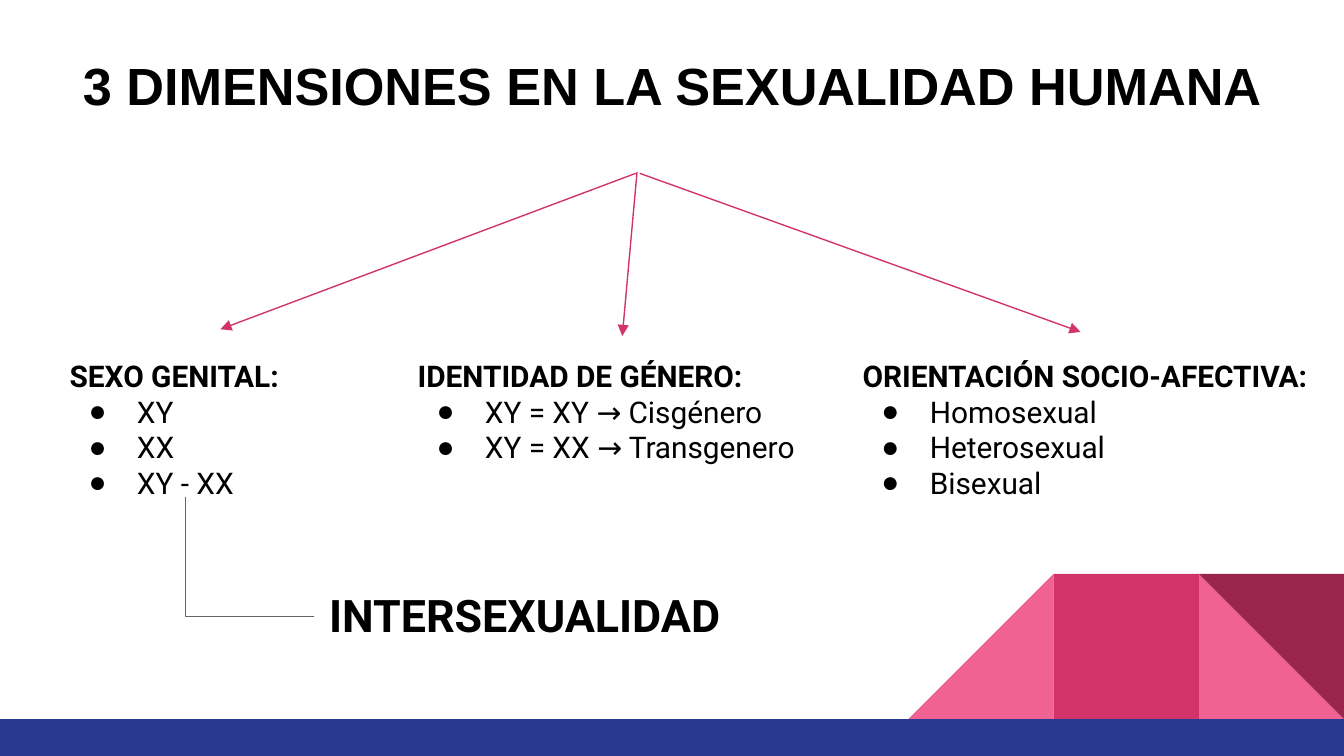
"""Builds the slide on three dimensions of human sexuality."""
from lxml import etree
from pptx import Presentation
from pptx import util as u
from pptx.dml.color import RGBColor
from pptx.enum import shapes, text
from pptx.oxml import ns

INK = {"black": "000000", "pink": "F06292", "rose": "D23369",
       "wine": "9C254D", "blue": "2A3990", "gray": "666666"}


def write(par, words, size, font, bold):
    run = par.add_run()
    run.text = words
    run.font.size = u.Pt(size)
    run.font.name = font
    run.font.bold = bold
    run.font.color.rgb = RGBColor.from_string(INK["black"])


def link(kind, start, end, ink, width):
    line = slide.shapes.add_connector(kind, *map(u.Inches, start + end))
    line.line.color.rgb = RGBColor.from_string(INK[ink])
    line.line.width = u.Pt(width)
    etree.SubElement(line._element.spPr, ns.qn("a:effectLst"))
    return line


deck = Presentation()
deck.slide_width = u.Inches(10)
deck.slide_height = u.Inches(10) * 9 // 16
slide = deck.slides.add_slide(deck.slide_layouts[5])

side, top = 1.08, 4.27
tri, rect = shapes.MSO_SHAPE.RIGHT_TRIANGLE, shapes.MSO_SHAPE.RECTANGLE
decor = [
    (tri, 10 - side, top, side, side, "pink", 0, False),
    (tri, 10 - 3 * side, top, side, side, "pink", 0, True),
    (rect, 10 - 2 * side, top, side, side, "rose", 0, False),
    (tri, 10 - side, top, side, side, "wine", 180, False),
    (rect, 0, top + side, 10, 0.28, "blue", 0, False),
]
for kind, x, y, w, h, ink, turn, flip in decor:
    part = slide.shapes.add_shape(kind, *map(u.Inches, (x, y, w, h)))
    part.shadow.inherit = False
    part.fill.solid()
    part.fill.fore_color.rgb = RGBColor.from_string(INK[ink])
    part.line.fill.background()
    part.rotation = turn
    if flip:
        part._element.spPr.find(ns.qn("a:xfrm")).set("flipH", "1")

title = slide.shapes.title
title.left, title.top = u.Inches(0.34), u.Inches(0.23)
title.width, title.height = u.Inches(9.32), u.Inches(0.66)
frame = title.text_frame
frame.margin_left = frame.margin_right = u.Inches(0.1)
frame.margin_top = frame.margin_bottom = u.Inches(0.1)
frame.auto_size = text.MSO_AUTO_SIZE.NONE
frame.vertical_anchor = text.MSO_ANCHOR.TOP
par = frame.paragraphs[0]
par.alignment = text.PP_ALIGN.CENTER
par.line_spacing = 1.15
par.space_before, par.space_after = u.Pt(14), u.Pt(4)
write(par, "3 DIMENSIONES EN LA SEXUALIDAD HUMANA", 28, "Arial", True)

arrows = [((4.73, 1.29), (1.64, 2.45)),
          ((4.74, 1.28), (4.63, 2.5)),
          ((4.76, 1.29), (8.04, 2.47))]
for start, end in arrows:
    arrow = link(shapes.MSO_CONNECTOR.STRAIGHT, start, end, "rose", 0.75)
    etree.SubElement(arrow.line._get_or_add_ln(), ns.qn("a:tailEnd"),
                     type="triangle", w="med", len="med")

bend = link(shapes.MSO_CONNECTOR.ELBOW, (2.34, 4.59), (1.38, 3.7), "gray", 0.5)
bend._element.spPr.find(ns.qn("a:prstGeom")).set("prst", "bentConnector2")

blocks = [
    (0.42, 2.56, 1.92, 1.14, 16, "SEXO GENITAL:", ["XY", "XX", "XY - XX"]),
    (3.01, 2.56, 3.23, 1.27, 16, "IDENTIDAD DE GÉNERO:",
     ["XY = XY → Cisgénero", "XY = XX → Transgenero"]),
    (6.32, 2.56, 3.59, 1, 16, "ORIENTACIÓN SOCIO-AFECTIVA:",
     ["Homosexual", "Heterosexual", "Bisexual"]),
    (2.35, 4.27, 3.38, 0.8, 24, "INTERSEXUALIDAD", []),
]
for x, y, w, h, size, head, items in blocks:
    box = slide.shapes.add_textbox(*map(u.Inches, (x, y, w, h)))
    frame = box.text_frame
    frame.word_wrap = True
    frame.margin_left = frame.margin_right = u.Inches(0.1)
    frame.margin_top = frame.margin_bottom = u.Inches(0.1)
    write(frame.paragraphs[0], head, size, "Roboto", True)
    for item in items:
        par = frame.add_paragraph()
        write(par, item, size, "Roboto", False)
        props = par._p.get_or_add_pPr()
        props.set("marL", str(u.Inches(0.5)))
        props.set("indent", str(u.Inches(-0.36)))
        tint = etree.SubElement(props, ns.qn("a:buClr"))
        etree.SubElement(tint, ns.qn("a:srgbClr"), val=INK["black"])
        etree.SubElement(props, ns.qn("a:buFont"), typeface="Arial")
        etree.SubElement(props, ns.qn("a:buChar"), char="●")

deck.save("out.pptx")
